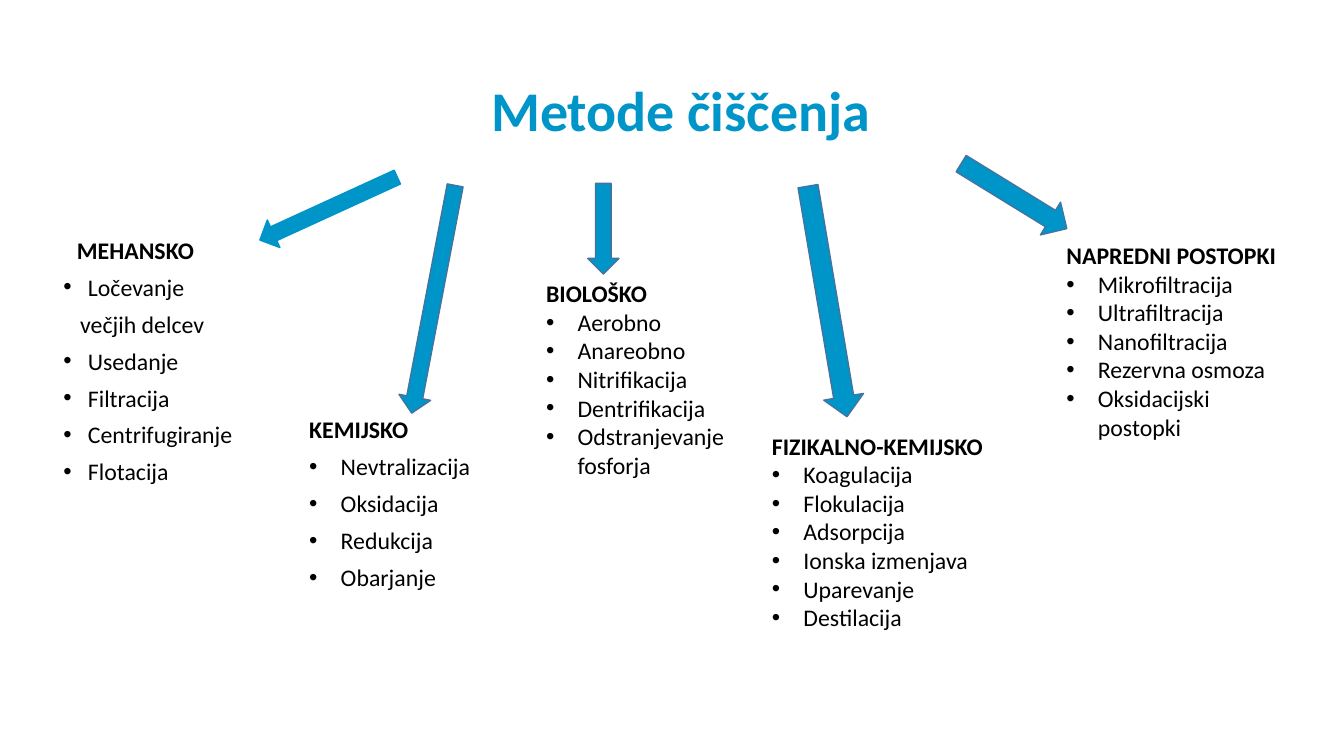
from dataclasses import dataclass

import pptx
import pptx.dml.color
import pptx.enum.shapes
import pptx.enum.text
import pptx.oxml
import pptx.util
from lxml import etree

Pt = pptx.util.Pt
BLUE, EDGE, BLACK = "0095C8", "43739E", "000000"
NS = "http://schemas.openxmlformats.org/drawingml/2006/main"


@dataclass
class Group:
    left: float
    top: float
    width: float
    height: float
    head: str
    items: tuple[str, ...]
    hang: float = 22.5
    gap: float = 0
    inset: float = 0
    loose: str = ""  # the one item without a bullet


@dataclass
class Arrow:
    left: float
    top: float
    width: float
    height: float
    turn: float = 0
    edge: str = EDGE


GROUPS = [
    Group(38.2, 164.5, 166.3, 215, "MEHANSKO",
          ("Ločevanje", "večjih delcev", "Usedanje", "Filtracija",
           "Centrifugiranje", "Flotacija"),
          hang=17.5, gap=6, inset=9.6, loose="večjih delcev"),
    Group(383, 195.8, 180, 160, "BIOLOŠKO",
          ("Aerobno", "Anareobno", "Nitrifikacija", "Dentrifikacija",
           "Odstranjevanje fosforja")),
    Group(213.8, 293, 166.3, 206, "KEMIJSKO",
          ("Nevtralizacija", "Oksidacija", "Redukcija", "Obarjanje"), gap=6),
    Group(544.3, 304.6, 216, 206, "FIZIKALNO-KEMIJSKO",
          ("Koagulacija", "Flokulacija", "Adsorpcija", "Ionska izmenjava",
           "Uparevanje", "Destilacija")),
    Group(754.6, 168.5, 171.4, 204, "NAPREDNI POSTOPKI",
          ("Mikrofiltracija", "Ultrafiltracija", "Nanofiltracija",
           "Rezervna osmoza", "Oksidacijski postopki")),
]

ARROWS = [
    Arrow(223.9, 95, 21.6, 108, 65.4, BLUE),
    Arrow(298.1, 131, 23, 165.6, 10.8),
    Arrow(419.8, 131, 22.3, 64.8),
    Arrow(576.7, 131.8, 28.8, 167, 350.4),
    Arrow(710.6, 95.8, 27.4, 88.6, 301.6),
]


def color(code: str) -> pptx.dml.color.RGBColor:
    return pptx.dml.color.RGBColor.from_string(code)


def style(para, size: float, code: str, bold: bool) -> None:
    for run in para.runs:
        run.font.name = "Calibri"
        run.font.size = Pt(size)
        run.font.bold = bold
        run.font.color.rgb = color(code)


def indent(para, left: float, first: float = 0) -> None:
    props = para._p.get_or_add_pPr()
    props.set("marL", str(Pt(left)))
    props.set("indent", str(Pt(first)))


def bullet(para) -> None:
    props = para._p.get_or_add_pPr()
    tint = etree.SubElement(props, f"{{{NS}}}buClr")
    etree.SubElement(tint, f"{{{NS}}}srgbClr", val=BLACK)
    etree.SubElement(props, f"{{{NS}}}buFont", typeface="Arial")
    etree.SubElement(props, f"{{{NS}}}buChar", char="•")


def add_box(slide, left: float, top: float, width: float, height: float):
    box = slide.shapes.add_textbox(Pt(left), Pt(top), Pt(width), Pt(height))
    box.text_frame.word_wrap = True
    return box.text_frame


def add_title(slide) -> None:
    frame = add_box(slide, 78.5, 41.8, 815.8, 77.8)
    frame.vertical_anchor = pptx.enum.text.MSO_ANCHOR.MIDDLE
    frame.text = "Metode čiščenja"
    para = frame.paragraphs[0]
    para.alignment = pptx.enum.text.PP_ALIGN.CENTER
    para.line_spacing = 0.9
    style(para, 40, BLUE, True)


def add_group(slide, group: Group) -> None:
    frame = add_box(slide, group.left, group.top, group.width, group.height)
    frame.text = group.head
    head = frame.paragraphs[0]
    indent(head, group.inset)
    style(head, 17, BLACK, True)
    for item in group.items:
        para = frame.add_paragraph()
        para.text = item
        if item == group.loose:
            indent(para, 12)
        else:
            indent(para, group.hang, -group.hang)
            bullet(para)
        para.space_before = Pt(group.gap)
        style(para, 17, BLACK, False)


def add_arrow(slide, arrow: Arrow) -> None:
    kind = pptx.enum.shapes.MSO_SHAPE.DOWN_ARROW
    shape = slide.shapes.add_shape(kind, Pt(arrow.left), Pt(arrow.top),
                                   Pt(arrow.width), Pt(arrow.height))
    shape.rotation = arrow.turn
    shape.shadow.inherit = False
    shape.fill.solid()
    shape.fill.fore_color.rgb = color(BLUE)
    shape.line.color.rgb = color(arrow.edge)
    shape.line.width = Pt(1)


def main() -> None:
    deck = pptx.Presentation()
    deck.slide_width, deck.slide_height = Pt(960), Pt(540)
    slide = deck.slides.add_slide(deck.slide_layouts[6])
    add_title(slide)
    for group in GROUPS:
        add_group(slide, group)
    for arrow in ARROWS:
        add_arrow(slide, arrow)
    deck.save("out.pptx")


if __name__ == "__main__":
    main()
